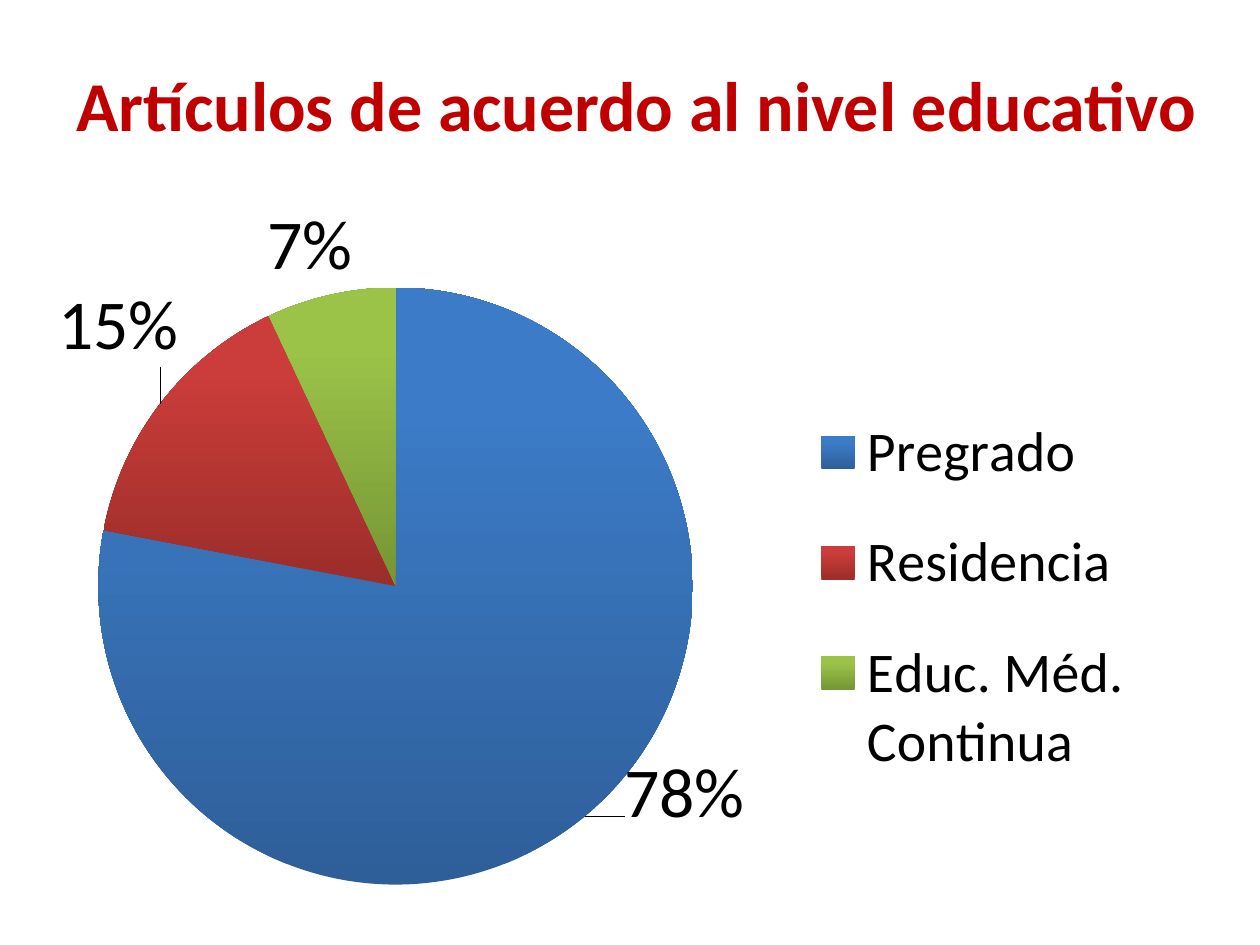
from lxml.etree import SubElement
from pptx import Presentation
from pptx.chart.data import CategoryChartData
from pptx.dml.color import RGBColor
from pptx.enum.chart import XL_CHART_TYPE, XL_LABEL_POSITION, XL_LEGEND_POSITION
from pptx.oxml.ns import qn
from pptx.util import Pt

LEVELS = [
    ("Pregrado", 0.78, ("2E5F99", "3C7BC7"), (0.03, -0.09)),
    ("Residencia", 0.15, ("9B2D2A", "CB3D3A"), (0.02, -0.04)),
    ("Educ. Méd. Continua", 0.07, ("769535", "9BC348"), (0.02, 0)),
]


def color(value):
    return RGBColor.from_string(value)


def set_format(target, values):
    for name, value in values.items():
        setattr(target, name, value)


def style_font(font, size, value="000000", bold=False, name="Calibri"):
    set_format(font, {"name": name, "size": Pt(size), "bold": bold})
    font.color.rgb = color(value)


def set_layout(parent, values):
    layout = parent.find(qn("c:layout"))
    if layout is None:
        layout = SubElement(parent, qn("c:layout"))
        parent.remove(layout)
        parent.insert(1 if parent.tag != qn("c:plotArea") else 0, layout)
    for child in list(layout):
        layout.remove(child)
    manual = SubElement(layout, qn("c:manualLayout"))
    for name, value in values.items():
        SubElement(manual, qn(f"c:{name}")).set("val", str(value))


def add_title(slide, left, top, width, height):
    shape = slide.shapes.add_textbox(Pt(left), Pt(top), Pt(width), Pt(height))
    shape.text_frame.word_wrap = False
    run = shape.text_frame.paragraphs[0].add_run()
    run.text = "Artículos de acuerdo al nivel educativo"
    style_font(run.font, 40, "C00000", True)


def style_slice(point, shades):
    fill = point.format.fill
    fill.gradient()
    fill.gradient_angle = 90
    for stop, position, shade in zip(fill.gradient_stops, (0, 0.8), shades):
        stop.position = position
        stop.color.rgb = color(shade)
    point.format.line.fill.background()


def add_level_chart(slide, left, top, width, height):
    data = CategoryChartData(number_format="0%")
    data.categories = [level[0] for level in LEVELS]
    data.add_series("Series 1", [level[1] for level in LEVELS])
    chart = slide.shapes.add_chart(
        XL_CHART_TYPE.PIE, Pt(left), Pt(top), Pt(width), Pt(height), data
    ).chart
    set_format(chart, {"has_title": False, "has_legend": True})
    style_font(chart.font, 18, name="Times New Roman")

    plot = chart.plots[0]
    set_format(plot, {"vary_by_categories": True, "has_data_labels": True})
    labels = plot.series[0].data_labels
    set_format(labels, {
        "show_value": True,
        "number_format": "0%",
        "number_format_is_linked": False,
        "position": XL_LABEL_POSITION.OUTSIDE_END,
    })
    style_font(labels.font, 40)
    for index, (_, _, shades, offset) in enumerate(LEVELS):
        point = plot.series[0].points[index]
        style_slice(point, shades)
        label = point.data_label
        style_font(label.font, 40)
        label.position = XL_LABEL_POSITION.OUTSIDE_END
        element = labels._element.findall(qn("c:dLbl"))[index]
        element.find(qn("c:txPr")).find(qn("a:bodyPr")).set("wrap", "none")
        set_layout(element, dict(zip("xy", offset)))

    set_format(chart.legend, {
        "position": XL_LEGEND_POSITION.RIGHT, "include_in_layout": False,
    })
    style_font(chart.legend.font, 32)
    edges = {"xMode": "edge", "yMode": "edge"}
    set_layout(chart.legend._element,
               edges | {"x": 0.65, "y": 0.3, "w": 0.3, "h": 0.57})
    set_layout(chart._chartSpace.chart.plotArea,
               {"layoutTarget": "inner"} | edges
               | {"x": 0.05, "y": 0.18, "w": 0.51, "h": 0.78})


def main():
    presentation = Presentation()
    set_format(presentation, {"slide_width": Pt(720), "slide_height": Pt(540)})
    slide = presentation.slides.add_slide(presentation.slide_layouts[6])
    add_level_chart(slide, 20, 83, 669, 442)
    add_title(slide, 36.5, 31.5, 662, 55)
    presentation.save("out.pptx")


if __name__ == "__main__":
    main()
